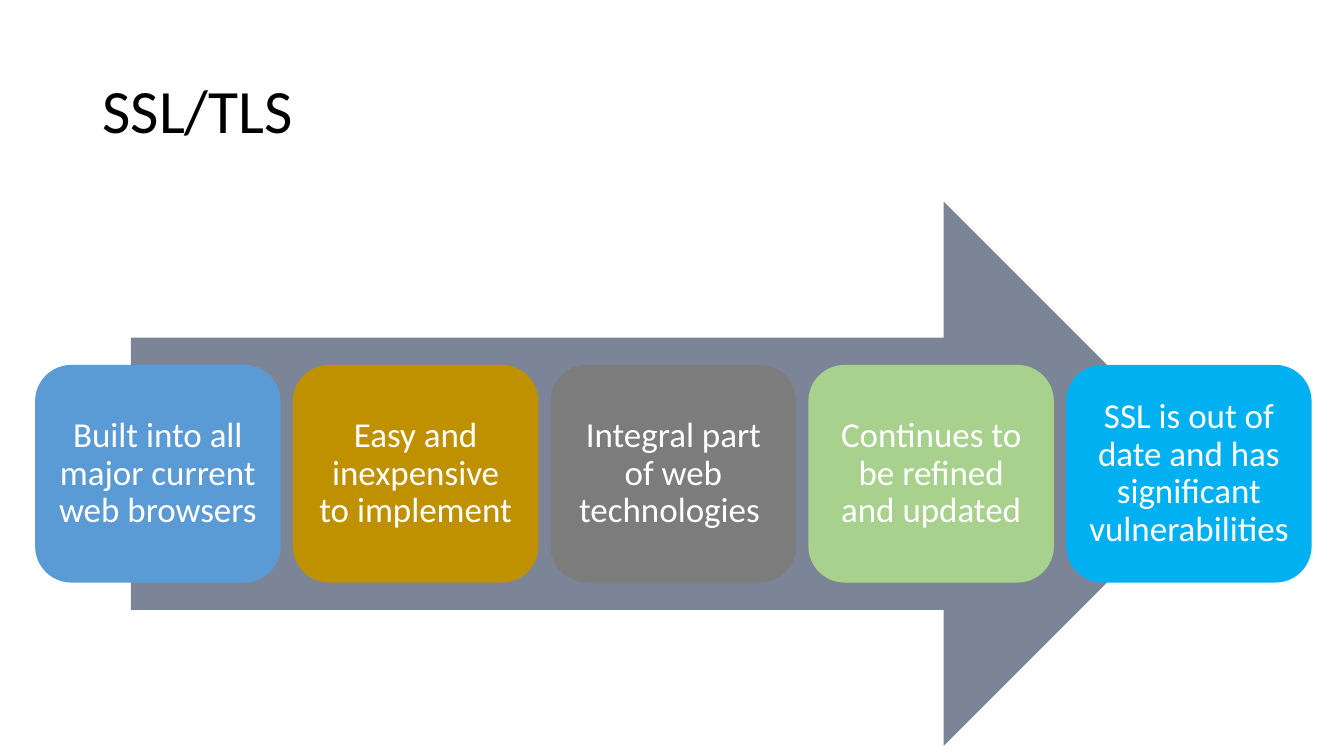
from dataclasses import dataclass

from pptx import Presentation
from pptx.dml.color import RGBColor
from pptx.enum.shapes import MSO_SHAPE
from pptx.enum.text import MSO_ANCHOR, MSO_AUTO_SIZE, PP_ALIGN
from pptx.util import Pt

ARROW, CARD = MSO_SHAPE.RIGHT_ARROW, MSO_SHAPE.ROUNDED_RECTANGLE
MIDDLE, NO_FIT = MSO_ANCHOR.MIDDLE, MSO_AUTO_SIZE.NONE
LEFT, CENTER = PP_ALIGN.LEFT, PP_ALIGN.CENTER
TITLE_ONLY = 5


@dataclass(frozen=True)
class Theme:
    font: str = "Calibri"
    title_size: int = 44
    card_size: int = 25
    title_color: str = "000000"
    card_text: str = "FFFFFF"
    arrow: str = "7C8598"


THEME = Theme()
TITLE_BOX = (66, 28.8, 828, 104.4)
PROCESS_BOX = (25.1, 144, 911.8, 388.8)
CARDS = [
    ("Built into all major current web browsers", "5B9BD5"),
    ("Easy and inexpensive to implement", "BF9000"),
    ("Integral part of web technologies ", "7C7C7C"),
    ("Continues to be refined and updated", "A9D18E"),
    ("SSL is out of date and has significant vulnerabilities", "00B0F0"),
]


def set_text(sp, text, size, color, align, margins):
    """Write one paragraph; margins are horizontal and vertical, in points."""
    tf = sp.text_frame
    tf.text = text
    across, down = map(Pt, margins)
    p = tf.paragraphs[0]
    formats = [
        (tf, {"word_wrap": True, "auto_size": NO_FIT,
              "vertical_anchor": MIDDLE,
              "margin_left": across, "margin_right": across,
              "margin_top": down, "margin_bottom": down}),
        (p, {"alignment": align, "line_spacing": 0.9}),
        (p.runs[0].font, {"name": THEME.font, "size": Pt(size)}),
    ]
    for target, values in formats:
        for name, value in values.items():
            setattr(target, name, value)
    p.runs[0].font.color.rgb = RGBColor.from_string(color)


def add_filled(slide, kind, box, color):
    sp = slide.shapes.add_shape(kind, *map(Pt, box))
    sp.shadow.inherit = False
    sp.fill.solid()
    sp.fill.fore_color.rgb = RGBColor.from_string(color)
    sp.line.fill.background()
    return sp


def add_title(slide, box, text):
    sp = slide.shapes.title
    sp.left, sp.top, sp.width, sp.height = map(Pt, box)
    set_text(sp, text, THEME.title_size, THEME.title_color, LEFT, (7.2, 3.6))


def add_process(slide, box, cards):
    """Lay a row of cards over an arrow that fills 85% of the box's width."""
    x, y, w, h = box
    add_filled(slide, ARROW, (x + 0.075 * w, y, 0.85 * w, h), THEME.arrow)
    gap_share = 0.05
    card_w = w / (len(cards) + gap_share * (len(cards) - 1))
    pitch = card_w * (1 + gap_share)
    for i, (text, color) in enumerate(cards):
        card_box = (x + i * pitch, y + 0.3 * h, card_w, 0.4 * h)
        sp = add_filled(slide, CARD, card_box, color)
        set_text(sp, text, THEME.card_size, THEME.card_text, CENTER, (7.5, 7.5))


def main():
    prs = Presentation()
    prs.slide_width, prs.slide_height = Pt(960), Pt(540)
    slide = prs.slides.add_slide(prs.slide_layouts[TITLE_ONLY])
    add_title(slide, TITLE_BOX, "SSL/TLS")
    add_process(slide, PROCESS_BOX, CARDS)
    prs.save("out.pptx")


if __name__ == "__main__":
    main()
